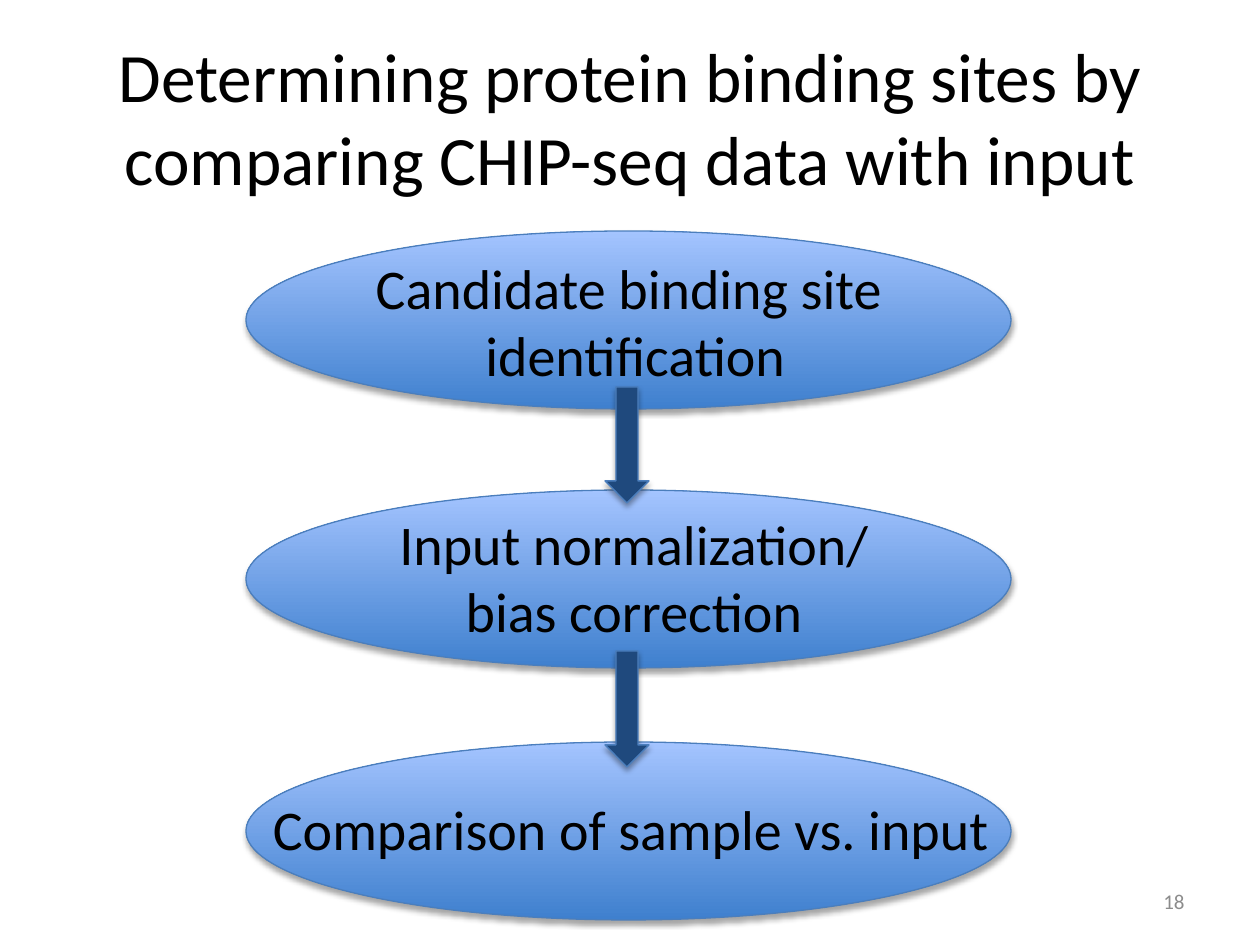
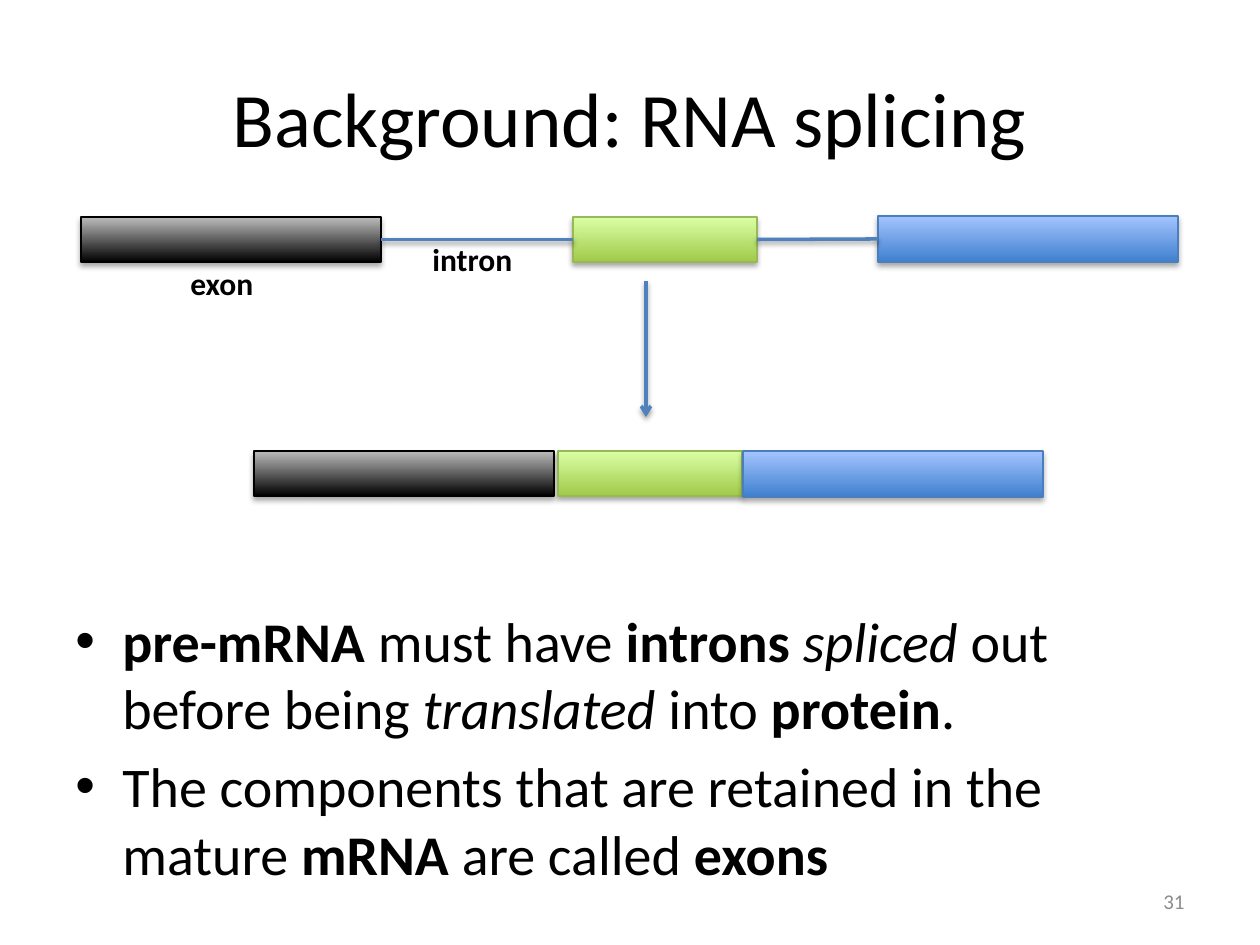
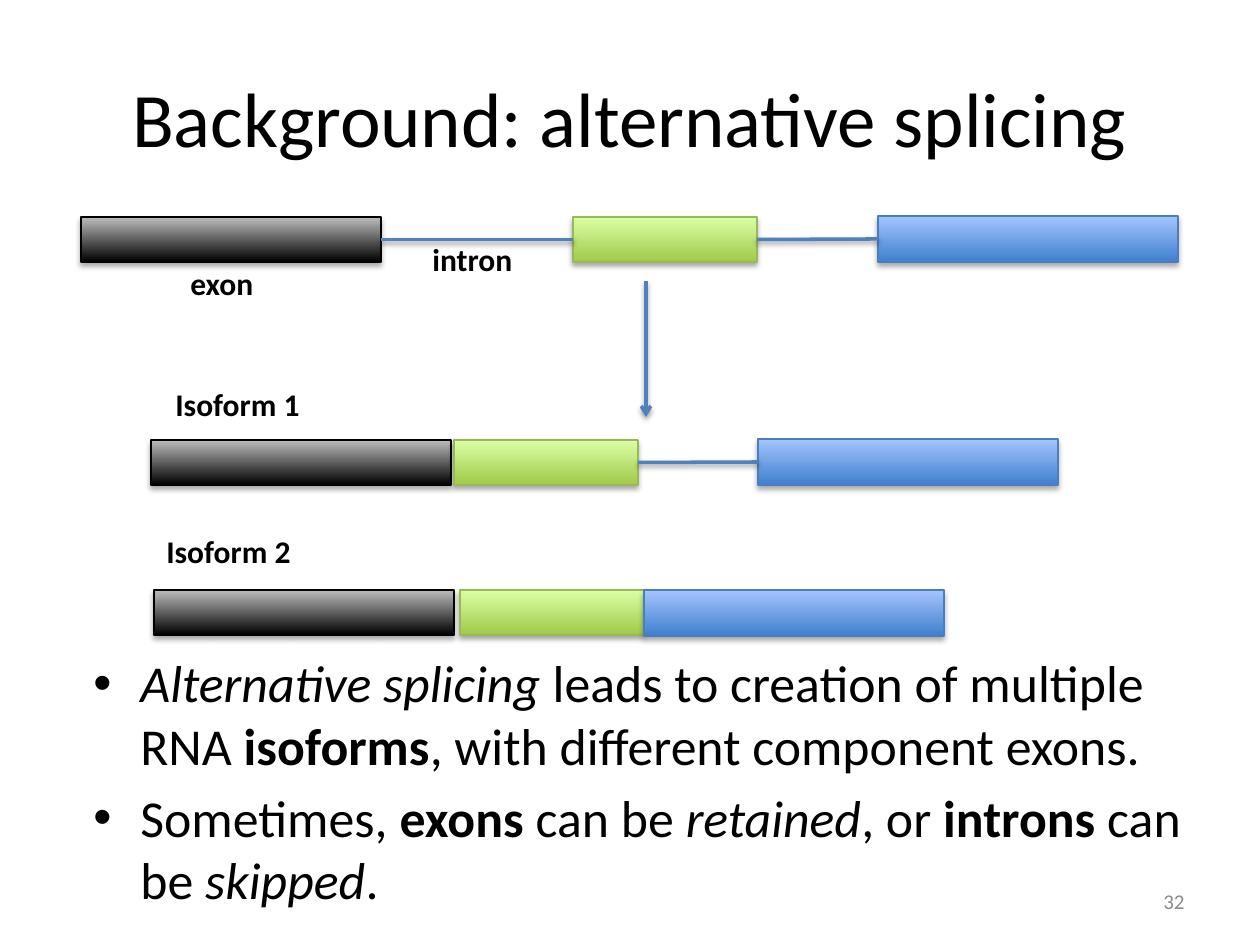
from dataclasses import dataclass

from lxml import etree
from pptx import Presentation
from pptx import util as u
from pptx.dml.color import RGBColor
from pptx.enum import shapes, text
from pptx.oxml import ns

PX = 914400 / 126
KIND = shapes.MSO_SHAPE
ALIGN = text.PP_ALIGN


@dataclass(frozen=True)
class Theme:
    """Colours and type sizes shared by all slides."""
    font: str = "Calibri"
    ink: str = "000000"
    grey: str = "8C8C8C"
    navy: str = "1F497D"
    link: str = "4F81BD"
    blue: tuple = ("3F80CE", "A4C4FF", "4B7EBC")
    green: tuple = ("A0CA4A", "DAFFA5", "98B955")
    black: tuple = ("000000", "BDBDBD", "000000")
    title: float = 44
    flow: float = 32
    label: float = 18
    foot: float = 12


T = Theme()


def px(*vals):
    """Turn pixel lengths into EMU."""
    return [u.Emu(round(v * PX)) for v in vals]


def rgb(code):
    """Turn a hex code into a colour."""
    return RGBColor.from_string(code)


def node(top, tag, **atts):
    """Add a DrawingML element below another one."""
    return etree.SubElement(top, ns.qn("a:" + tag), {k: str(v) for k, v in atts.items()})


def shade(item, dist=1.8, alpha=35):
    """Give a shape or connector a soft shadow straight below it."""
    list_ = node(item._element.spPr, "effectLst")
    drop = node(list_, "outerShdw", blurRad=u.Pt(3.1), dist=u.Pt(dist),
                dir=5400000, rotWithShape=0)
    node(node(drop, "srgbClr", val=T.ink), "alpha", val=alpha * 1000)


def block(home, kind, box, tone, flat=None):
    """Draw a shaded shape with a vertical blend or a flat fill."""
    item = home.add_shape(kind, *px(*box))
    low, high, edge = tone
    if flat:
        item.fill.solid()
        item.fill.fore_color.rgb = rgb(flat)
    else:
        item.fill.gradient()
        item.fill.gradient_angle = 90
        for stop, code in zip(item.fill.gradient_stops, (low, high)):
            stop.color.rgb = rgb(code)
    item.line.color.rgb = rgb(edge)
    item.line.width = u.Pt(0.75)
    shade(item)
    return item


def wire(home, start, end):
    """Draw a shaded straight line between two points."""
    line = home.add_connector(shapes.MSO_CONNECTOR.STRAIGHT, *px(*start, *end))
    line.line.color.rgb = rgb(T.link)
    line.line.width = u.Pt(2)
    return line


def write(home, box, paras, size, align=ALIGN.LEFT, mid=False, wrap=True, ink=T.ink):
    """Write paragraphs of (words, style) runs in a text box."""
    frame = home.add_textbox(*px(*box)).text_frame
    frame.word_wrap = wrap
    frame.vertical_anchor = text.MSO_ANCHOR.MIDDLE if mid else text.MSO_ANCHOR.TOP
    for num, runs in enumerate(paras):
        para = frame.add_paragraph() if num else frame.paragraphs[0]
        para.alignment = align
        for words, style in runs:
            run = para.add_run()
            run.text = words
            run.font.name = T.font
            run.font.size = u.Pt(size)
            run.font.color.rgb = rgb(ink)
            run.font.bold = "b" in style
            run.font.italic = "i" in style
    return frame


def label(home, box, words):
    """Write a bold one-line label."""
    write(home, box, [[(words, "b")]], T.label, wrap=False)


def points(home, box, paras, size):
    """Write a bulleted list with hanging indents."""
    frame = write(home, box, paras, size)
    (hang,) = px(47)
    for num, para in enumerate(frame.paragraphs):
        para.space_before = u.Pt(size * 0.2 if num else 0)
        props = para._p.get_or_add_pPr()
        props.set("marL", str(hang))
        props.set("indent", str(-hang))
        node(props, "buFont", typeface="Arial")
        node(props, "buChar", char="•")


def start(deck, title, page, size=T.title):
    """Add a blank slide with its title and page number."""
    home = deck.slides.add_slide(deck.slide_layouts[6]).shapes
    write(home, (63, 38, 1134, 157), [[(title, "")]], size, ALIGN.CENTER, mid=True)
    write(home, (903, 876, 294, 50), [[(page, "")]], T.foot, ALIGN.RIGHT, mid=True, ink=T.grey)
    return home


def step(home, box, note, lines):
    """Draw one flow step: an oval grouped with its text."""
    left, top, _, _ = box
    dx, dy, wide, high = note
    group = home.add_group_shape().shapes
    block(group, KIND.OVAL, box, T.blue)
    write(group, (left + dx, top + dy, wide, high), [[(line, "")] for line in lines],
          T.flow, ALIGN.CENTER, wrap=False)


def strand(home, top, lefts, introns=()):
    """Draw three exons in a row, with introns after the numbered ones."""
    lift = 1 if 1 in introns else 0
    looks = ((300, 45, 0, T.black), (184, 45, 0, T.green), (300, 46, lift, T.blue))
    exons = [block(home, KIND.RECTANGLE, (left, top - up, wide, high), tone)
             for left, (wide, high, up, tone) in zip(lefts, looks)]
    for num in introns:
        line = wire(home, (0, 0), (1, 1))
        line.begin_connect(exons[num], 3)
        line.end_connect(exons[num + 1], 1)
        shade(line, 1.6, 38)


def gene(home, box):
    """Draw the unspliced strand with labels and the arrow below it."""
    left, top, _, _ = box
    strand(home, top, [left + dx for dx in (0, 492, 797)], (0, 1))
    arrow = wire(home, (left + 565, top + 64), (left + 565, top + 200))
    node(arrow.line._get_or_add_ln(), "tailEnd", type="arrow")
    shade(arrow, 1.6, 38)
    label(home, (left + 97, top + 41, 91, 50), "exon")
    label(home, (left + 339, top + 17, 107, 50), "intron")


def flow(deck):
    """Build the binding site slide."""
    home = start(deck, "Determining protein binding sites by comparing CHIP-seq data with input",
                 "18", 39.6)
    steps = (
        (231, (114, 16, 538, 148), ("Candidate binding site", " identification")),
        (490, (138, 13, 500, 148), ("Input normalization/", "bias correction")),
        (742, (11, 46, 748, 80), ("Comparison of sample vs. input",)),
    )
    for top, note, lines in steps:
        step(home, (246, top, 765, 178), note, lines)
    for top in (387, 651):
        block(home, KIND.DOWN_ARROW, (605, top, 44, 116), T.blue, T.navy)


def splice(deck):
    """Build the RNA splicing slide."""
    home = start(deck, "Background: RNA splicing", "31")
    points(home, (63, 600, 1134, 300), [
        [("pre-mRNA ", "b"), ("must have ", ""), ("introns ", "b"), ("spliced", "i"),
         (" out before being ", ""), ("translated", "i"), (" into ", ""),
         ("protein", "b"), (".", "")],
        [("The components that are retained in the mature ", ""), ("mRNA", "b"),
         (" are called ", ""), ("exons", "b")],
    ], 32)
    gene(home, (81, 217, 1097, 200))
    strand(home, 451, (254, 558, 743))


def forms(deck):
    """Build the alternative splicing slide."""
    home = start(deck, "Background: alternative splicing", "32")
    points(home, (81, 645, 1134, 275), [
        [("Alternative splicing ", "i"), ("leads to creation of multiple RNA ", ""),
         ("isoforms", "b"), (", with different component exons.", "")],
        [("Sometimes, ", ""), ("exons ", "b"), ("can be ", ""), ("retained", "i"),
         (", or ", ""), ("introns ", "b"), ("can be ", ""), ("skipped", "i"), (".", "")],
    ], 29.6)
    gene(home, (81, 217, 1097, 200))
    strand(home, 440, (151, 454, 758), (1,))
    strand(home, 590, (154, 460, 644))
    label(home, (163, 379, 151, 50), "Isoform 1")
    label(home, (154, 526, 151, 50), "Isoform 2")


def main():
    """Build and save the deck."""
    deck = Presentation()
    deck.slide_width, deck.slide_height = px(1260, 945)
    for build in (flow, splice, forms):
        build(deck)
    deck.save("out.pptx")


if __name__ == "__main__":
    main()
